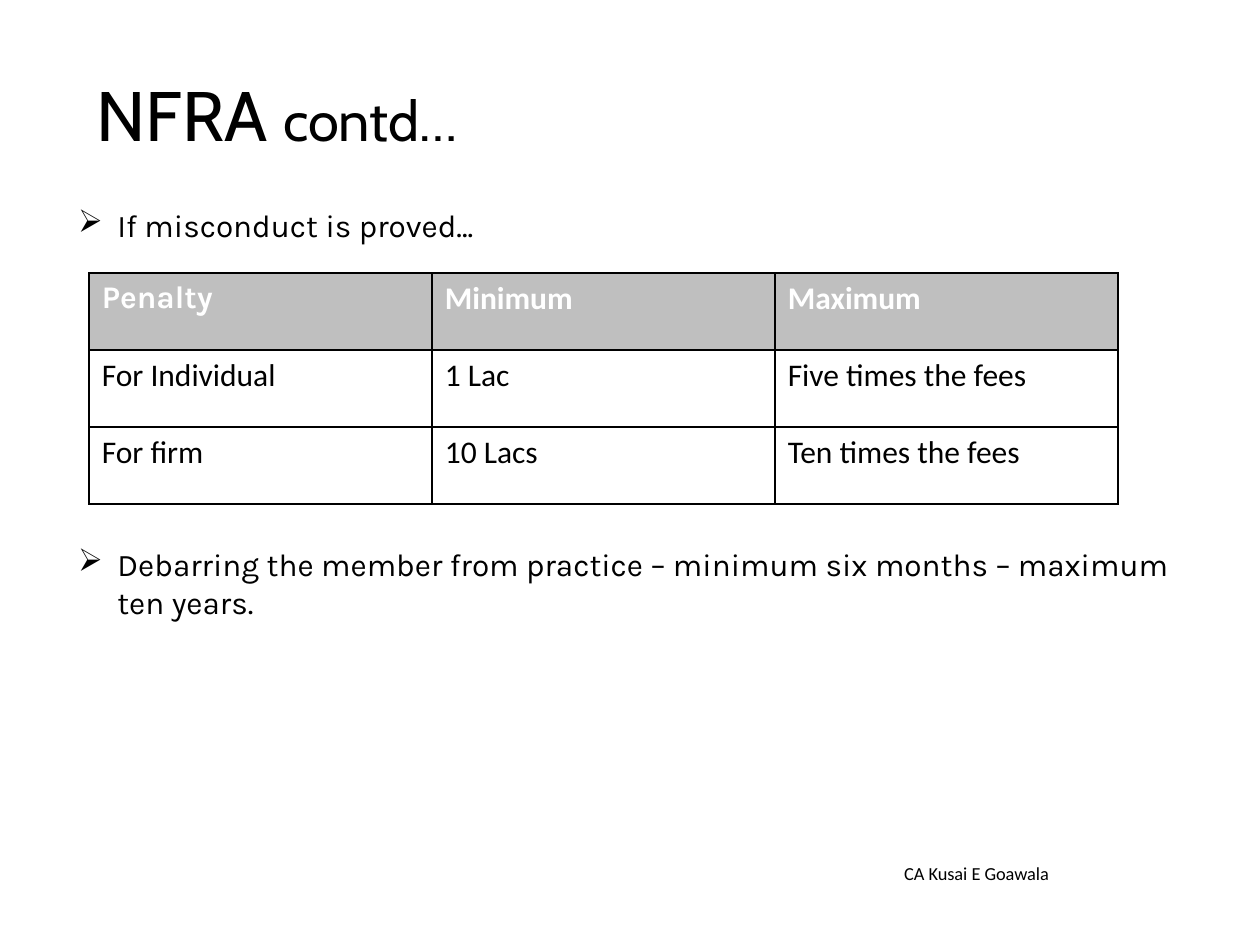
from dataclasses import dataclass

from lxml import etree
from pptx import Presentation
from pptx.dml.color import RGBColor
from pptx.enum.text import MSO_ANCHOR, PP_ALIGN
from pptx.oxml.ns import qn
from pptx.util import Pt

LEFT, RIGHT = PP_ALIGN.LEFT, PP_ALIGN.RIGHT
TOP, BOTTOM = MSO_ANCHOR.TOP, MSO_ANCHOR.BOTTOM


@dataclass(frozen=True)
class Theme:
    ink: str = "000000"
    paper: str = "FFFFFF"
    header: str = "BFBFBF"
    title_font: str = "Cabin"
    body_font: str = "Karla"
    table_font: str = "Calibri"
    title_size: float = 40
    subtitle_size: float = 32
    body_size: float = 18
    footer_size: float = 10.5


def add_text(para, text, *, font, size, color, bold=False):
    span = para.add_run()
    span.text = text
    span.font.name = font
    span.font.size = Pt(size)
    span.font.bold = bold
    span.font.color.rgb = RGBColor.from_string(color)


class PageBuilder:
    def __init__(self, deck, theme):
        self.theme = theme
        self.page = deck.slides.add_slide(deck.slide_layouts[6])

    def box(self, left, top, width, height, anchor=TOP):
        box = self.page.shapes.add_textbox(Pt(left), Pt(top), Pt(width), Pt(height))
        frame = box.text_frame
        frame.word_wrap = True
        frame.vertical_anchor = anchor
        return frame

    def title(self, main, rest):
        theme = self.theme
        para = self.box(48, 37.5, 624, 55.5).paragraphs[0]
        for text, size in ((main, theme.title_size), (rest, theme.subtitle_size)):
            add_text(para, text, font=theme.title_font, size=size, color=theme.ink)

    def bullets(self, items, gap, indent=22.5):
        theme = self.theme
        frame = self.box(37.5, 114, 646, 247)
        for index, text in enumerate(items):
            para = frame.add_paragraph() if index else frame.paragraphs[0]
            props = para._p.get_or_add_pPr()
            props.set("marL", str(Pt(indent)))
            props.set("indent", str(-Pt(indent)))
            etree.SubElement(props, qn("a:buChar"), char="➢")
            if index:
                para.space_before = Pt(gap)
            add_text(para, text, font=theme.body_font, size=theme.body_size,
                     color=theme.ink)

    def table(self, rows, left, top, column_width, row_height):
        theme = self.theme
        count = len(rows[0])
        grid = self.page.shapes.add_table(
            len(rows), count, Pt(left), Pt(top),
            Pt(column_width * count), Pt(row_height * len(rows))).table
        for column in grid.columns:
            column.width = Pt(column_width)
        for row_index, values in enumerate(rows):
            grid.rows[row_index].height = Pt(row_height)
            header = row_index == 0
            for column_index, text in enumerate(values):
                corner = header and column_index == 0
                cell = grid.cell(row_index, column_index)
                self.borders(cell)
                cell.fill.solid()
                cell.fill.fore_color.rgb = RGBColor.from_string(
                    theme.header if header else theme.paper)
                add_text(cell.text_frame.paragraphs[0], text,
                         font=theme.body_font if corner else theme.table_font,
                         size=theme.body_size, bold=header,
                         color=theme.paper if header else theme.ink)

    def borders(self, cell):
        props = cell._tc.get_or_add_tcPr()
        for side in ("lnL", "lnR", "lnT", "lnB"):
            line = etree.SubElement(props, qn(f"a:{side}"), w=str(Pt(1)))
            fill = etree.SubElement(line, qn("a:solidFill"))
            etree.SubElement(fill, qn("a:srgbClr"), val=self.theme.ink)

    def footer(self, text):
        theme = self.theme
        para = self.box(384, 496, 222.5, 12.5, BOTTOM).paragraphs[0]
        para.alignment = RIGHT
        add_text(para, text, font=theme.table_font, size=theme.footer_size,
                 color=theme.ink)


def main():
    deck = Presentation()
    deck.slide_width, deck.slide_height = Pt(720), Pt(540)
    page = PageBuilder(deck, Theme())
    page.footer("CA Kusai E Goawala")
    page.title("NFRA ", "contd…")
    page.bullets([
        "If misconduct is proved...",
        "Debarring the member from practice – minimum six months – maximum ten years.",
    ], gap=172.5)
    page.table([
        ("Penalty", "Minimum", "Maximum"),
        ("For Individual", "1 Lac", "Five times the fees"),
        ("For firm", "10 Lacs", "Ten times the fees"),
    ], left=51, top=156, column_width=196, row_height=44)
    deck.save("out.pptx")


if __name__ == "__main__":
    main()
